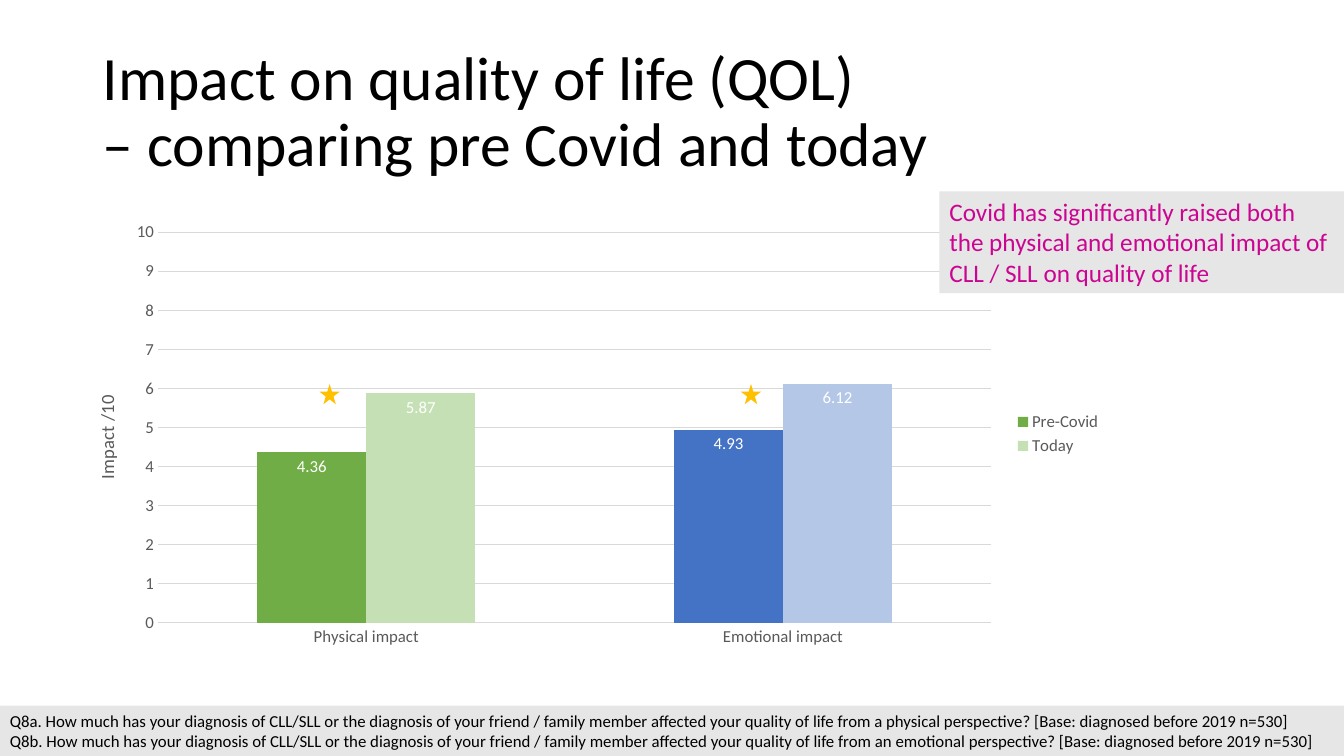
from lxml import etree
from pptx import Presentation
from pptx.chart.data import CategoryChartData
from pptx.dml.color import RGBColor
from pptx.enum.chart import XL_CHART_TYPE, XL_LABEL_POSITION, XL_LEGEND_POSITION, XL_TICK_MARK
from pptx.enum.shapes import MSO_SHAPE
from pptx.enum.text import MSO_ANCHOR, PP_ALIGN
from pptx.oxml.ns import qn
from pptx.util import Inches, Pt

COLUMN_CLUSTERED = XL_CHART_TYPE.COLUMN_CLUSTERED
INSIDE_END = XL_LABEL_POSITION.INSIDE_END
LEGEND_RIGHT = XL_LEGEND_POSITION.RIGHT
NO_TICK = XL_TICK_MARK.NONE
RECTANGLE, STAR = MSO_SHAPE.RECTANGLE, MSO_SHAPE.STAR_5_POINT
TOP, MIDDLE, LEFT = MSO_ANCHOR.TOP, MSO_ANCHOR.MIDDLE, PP_ALIGN.LEFT

BLACK = RGBColor(0x00, 0x00, 0x00)
WHITE = RGBColor(0xFF, 0xFF, 0xFF)
PANEL_GREY = RGBColor(0xE7, 0xE6, 0xE6)
TEXT_GREY = RGBColor(0x59, 0x59, 0x59)
LINE_GREY = RGBColor(0xD9, 0xD9, 0xD9)
MAGENTA = RGBColor(0xCB, 0x05, 0x92)
GOLD = RGBColor(0xFF, 0xC0, 0x00)
GREEN = RGBColor(0x70, 0xAD, 0x47)
PALE_GREEN = RGBColor(0xC5, 0xE0, 0xB4)
BLUE = RGBColor(0x44, 0x72, 0xC4)
PALE_BLUE = RGBColor(0xB4, 0xC7, 0xE7)

CATEGORIES = ["Physical impact", "Emotional impact"]
SERIES = [
    ("Pre-Covid", [4.36, 4.93], [GREEN, BLUE]),
    ("Today", [5.87, 6.12], [PALE_GREEN, PALE_BLUE]),
]
QUESTIONS = [
    f"{number}. How much has your diagnosis of CLL/SLL or the diagnosis of your friend / family member "
    f"affected your quality of life from {perspective} perspective? [Base: diagnosed before 2019 n=530]"
    for number, perspective in [("Q8a", "a physical"), ("Q8b", "an emotional")]
]


class SlideBuilder:
    """Places elements on one slide; every box is in percent of the slide's size."""

    font_name = "Calibri"

    def __init__(self, presentation):
        self.width = presentation.slide_width
        self.height = presentation.slide_height
        self.slide = presentation.slides.add_slide(presentation.slide_layouts[5])

    def box(self, left, top, width, height):
        return (round(self.width * left / 100), round(self.height * top / 100),
                round(self.width * width / 100), round(self.height * height / 100))

    def style(self, font, size, color):
        font.name = self.font_name
        font.size = Pt(size)
        font.bold = False
        font.color.rgb = color

    def title(self, text, box, size):
        title = self.slide.shapes.title
        title.left, title.top, title.width, title.height = self.box(*box)
        frame = title.text_frame
        frame.text = text
        frame.word_wrap = True
        frame.vertical_anchor = MIDDLE
        paragraph = frame.paragraphs[0]
        paragraph.alignment = LEFT
        paragraph.line_spacing = 0.9
        self.style(paragraph.font, size, BLACK)

    def shape(self, kind, box, fill):
        shape = self.slide.shapes.add_shape(kind, *self.box(*box))
        shape.shadow.inherit = False
        shape.fill.solid()
        shape.fill.fore_color.rgb = fill
        shape.line.fill.background()
        return shape

    def panel(self, lines, box, size, color):
        frame = self.shape(RECTANGLE, box, PANEL_GREY).text_frame
        frame.word_wrap = True
        frame.vertical_anchor = TOP
        frame.text = "\n".join(lines)
        for paragraph in frame.paragraphs:
            paragraph.alignment = LEFT
            self.style(paragraph.font, size, color)

    def place(self, parent, **settings):
        """Give a chart part a manual layout."""
        layout = parent.find(qn("c:layout"))
        if layout is None:
            layout = parent.makeelement(qn("c:layout"))
            before = parent.find(qn("c:tx"))
            parent.insert(0 if before is None else parent.index(before) + 1, layout)
        for child in list(layout):
            layout.remove(child)
        manual = etree.SubElement(layout, qn("c:manualLayout"))
        for name, value in settings.items():
            etree.SubElement(manual, qn(f"c:{name}")).set("val", str(value))

    def column_chart(self, box, categories, series, axis_title):
        data = CategoryChartData(number_format="0.00")
        data.categories = categories
        for name, values, _ in series:
            data.add_series(name, values)
        chart = self.slide.shapes.add_chart(COLUMN_CLUSTERED, *self.box(*box), data).chart
        chart.has_title = False
        self.style(chart.font, 12, TEXT_GREY)

        # Legend
        chart.has_legend = True
        chart.legend.position = LEGEND_RIGHT
        chart.legend.include_in_layout = False
        self.style(chart.legend.font, 12, TEXT_GREY)

        # Axes
        category_axis, value_axis = chart.category_axis, chart.value_axis
        for axis in (category_axis, value_axis):
            axis.major_tick_mark = axis.minor_tick_mark = NO_TICK
            self.style(axis.tick_labels.font, 12, TEXT_GREY)
        value_axis.minimum_scale, value_axis.maximum_scale = 0, 10
        value_axis.major_unit = 1
        value_axis.tick_labels.number_format = "0"
        value_axis.tick_labels.number_format_is_linked = False
        value_axis.format.line.fill.background()
        for line in (category_axis.format.line, value_axis.major_gridlines.format.line):
            line.color.rgb = LINE_GREY
            line.width = Pt(0.75)
        title_frame = value_axis.axis_title.text_frame
        title_frame.text = axis_title
        self.style(title_frame.paragraphs[0].font, 13.3, TEXT_GREY)

        # Columns and their labels
        plot = chart.plots[0]
        plot.gap_width, plot.overlap = 182, 0
        plot.vary_by_categories = False
        for column_series, (_, _, colors) in zip(plot.series, series):
            column_series.format.fill.solid()
            column_series.format.fill.fore_color.rgb = colors[0]
            point_fill = column_series.points[1].format.fill
            point_fill.solid()
            point_fill.fore_color.rgb = colors[1]
            labels = column_series.data_labels
            labels.show_value = True
            labels.position = INSIDE_END
            self.style(labels.font, 12, WHITE)

        # Plot area and axis title positions
        self.place(chart._chartSpace.chart.plotArea, layoutTarget="inner", xMode="edge",
                   yMode="edge", x=0.091, y=0.044, w=0.794, h=0.883)
        self.place(value_axis.axis_title._element, xMode="edge", yMode="edge", x=0.027, y=0.405)


def main():
    presentation = Presentation()
    presentation.slide_width, presentation.slide_height = Inches(13.33), Inches(7.5)
    builder = SlideBuilder(presentation)

    # Title and question wording
    builder.title("Impact on quality of life (QOL)\v– comparing pre Covid and today",
                  (6.9, 5.33, 86.25, 19.33), 44)
    builder.panel(QUESTIONS, (0, 93.33, 100, 6.67), 12, BLACK)

    # Chart with its callout
    builder.column_chart((4.65, 28.13, 78.1, 58.53), CATEGORIES, SERIES, "Impact /10")
    builder.panel(["Covid has significantly raised both the physical and emotional impact of "
                   "CLL / SLL on quality of life"], (69.9, 25.33, 30.1, 13.47), 18, MAGENTA)

    # Significance stars
    for left in (23.78, 55.13):
        builder.shape(STAR, (left, 50.8, 1.5, 2.67), GOLD)

    presentation.save("out.pptx")


if __name__ == "__main__":
    main()
